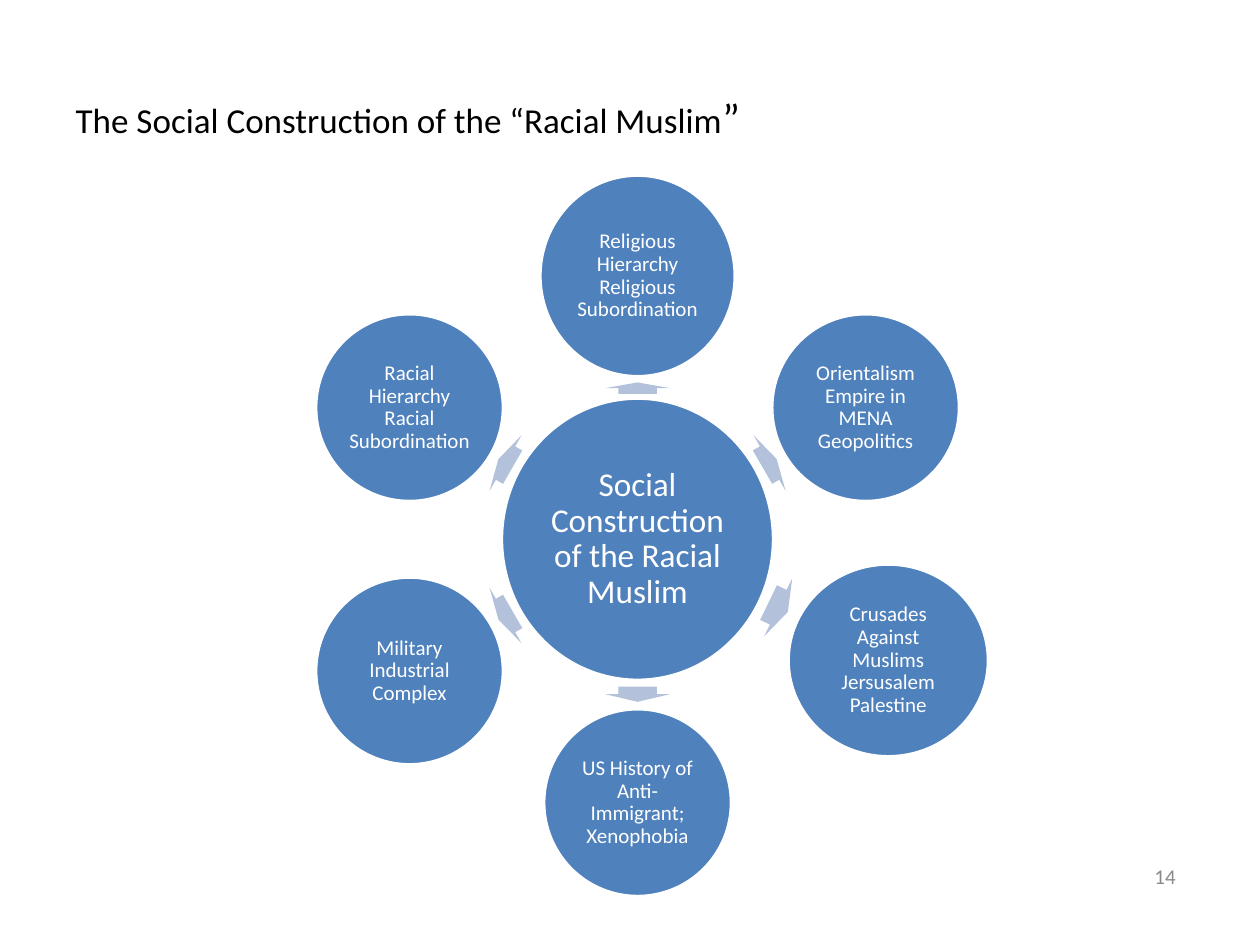
import math

import pptx
from pptx.dml.color import RGBColor
from pptx.enum.shapes import MSO_SHAPE
from pptx.enum.text import MSO_ANCHOR, PP_ALIGN
from pptx.util import Inches, Pt

TITLE = [("The Social Construction of the “Racial Muslim", 20), ("”", 24)]
PAGE_NUMBER = "14"
HUB_TEXT = "Social Construction of the Racial Muslim"
HUB_CENTER = (5.06, 4.28)
HUB_SIZE = (2.16, 2.24)

# text, angle (clockwise from the right), distance from hub, circle size,
# arrow distance from hub, arrow length
SPOKES = [
    ("Religious Hierarchy Religious Subordination", 270, 2.09, (1.55, 1.6), 1.2, 0.09),
    ("Orientalism Empire in MENA Geopolitics", 330, 2.09, (1.49, 1.49), 1.21, 0.13),
    ("Crusades Against Muslims Jersusalem Palestine", 25.8, 2.21, (1.59, 1.53), 1.24, 0.17),
    ("US History of Anti-Immigrant; Xenophobia", 90, 2.09, (1.49, 1.49), 1.23, 0.12),
    ("Military Industrial Complex", 150, 2.09, (1.49, 1.49), 1.21, 0.13),
    ("Racial Hierarchy Racial Subordination", 210, 2.09, (1.49, 1.49), 1.21, 0.13),
]
ARROW_HEIGHT = 0.51
BLUE, PALE_BLUE, WHITE, BLACK, GRAY = "4F81BD", "B3C1DB", "FFFFFF", "000000", "898989"


def color(hex_text):
    return RGBColor.from_string(hex_text)


def apply(target, **values):
    """Set every named attribute on the target."""
    for name, value in values.items():
        setattr(target, name, value)


def style_font(font, size, hex_text):
    apply(font, name="Calibri", size=Pt(size))
    font.color.rgb = color(hex_text)


def from_hub(angle, distance):
    turn = math.radians(angle)
    return (HUB_CENTER[0] + distance * math.cos(turn),
            HUB_CENTER[1] + distance * math.sin(turn))


def add_centered(slide, kind, center, size, fill):
    """Add a filled preset shape around a center point."""
    left, top = (middle - length / 2 for middle, length in zip(center, size))
    shape = slide.shapes.add_shape(kind, *map(Inches, (left, top, *size)))
    shape.shadow.inherit = False
    shape.fill.solid()
    shape.fill.fore_color.rgb = color(fill)
    return shape


def add_circle(slide, text, center, size, font_size, inset):
    circle = add_centered(slide, MSO_SHAPE.OVAL, center, size, BLUE)
    circle.line.color.rgb = color(WHITE)
    circle.line.width = Pt(2)
    frame = circle.text_frame
    margin = Inches(inset)
    apply(frame, text=text, word_wrap=True, vertical_anchor=MSO_ANCHOR.MIDDLE,
          margin_left=margin, margin_right=margin,
          margin_top=margin, margin_bottom=margin)
    para = frame.paragraphs[0]
    apply(para, alignment=PP_ALIGN.CENTER, line_spacing=0.9)
    style_font(para.font, font_size, WHITE)


def add_arrow(slide, angle, distance, length):
    arrow = add_centered(slide, MSO_SHAPE.RIGHT_ARROW, from_hub(angle, distance),
                         (length, ARROW_HEIGHT), PALE_BLUE)
    arrow.line.fill.background()
    arrow.rotation = angle
    arrow.adjustments[0] = 0.6
    arrow.adjustments[1] = 0.5


def add_title(slide):
    title = slide.shapes.title
    apply(title, left=Inches(0.5), top=Inches(0.3),
          width=Inches(9), height=Inches(1.25))
    title.text_frame.vertical_anchor = MSO_ANCHOR.MIDDLE
    para = title.text_frame.paragraphs[0]
    para.alignment = PP_ALIGN.LEFT
    for text, size in TITLE:
        span = para.add_run()
        span.text = text
        style_font(span.font, size, BLACK)


def add_page_number(slide):
    box = slide.shapes.add_textbox(*map(Inches, (7.1, 6.75, 2.33, 0.4)))
    apply(box.text_frame, text=PAGE_NUMBER, word_wrap=True,
          vertical_anchor=MSO_ANCHOR.MIDDLE)
    para = box.text_frame.paragraphs[0]
    para.alignment = PP_ALIGN.RIGHT
    style_font(para.font, 12, GRAY)


def main():
    deck = pptx.Presentation()
    apply(deck, slide_width=Inches(10), slide_height=Inches(7.5))
    slide = deck.slides.add_slide(deck.slide_layouts[5])
    add_title(slide)
    add_circle(slide, HUB_TEXT, HUB_CENTER, HUB_SIZE, 19, 0.03)
    for text, angle, distance, size, arrow_distance, arrow_length in SPOKES:
        add_arrow(slide, angle, arrow_distance, arrow_length)
        add_circle(slide, text, from_hub(angle, distance), size, 12, 0.02)
    add_page_number(slide)
    deck.save("out.pptx")


if __name__ == "__main__":
    main()
